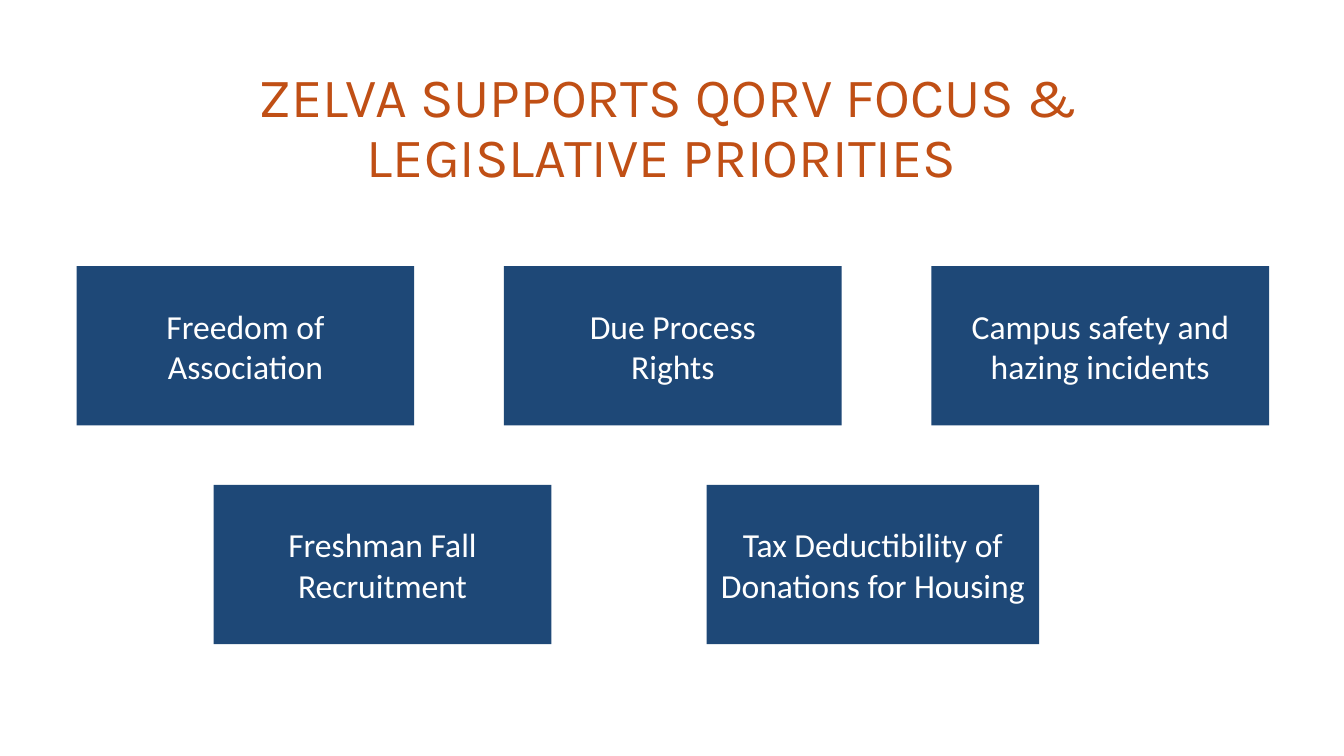
from dataclasses import dataclass

from pptx import Presentation
from pptx import util as u
from pptx.dml import color
from pptx.enum import shapes, text


@dataclass(frozen=True)
class Theme:
    heading: color.RGBColor = color.RGBColor(0xC0, 0x4F, 0x15)
    box: color.RGBColor = color.RGBColor(0x1E, 0x48, 0x77)
    box_text: color.RGBColor = color.RGBColor(0xFF, 0xFF, 0xFF)
    heading_font: str = "Karla"
    body_font: str = "Calibri"
    heading_size: float = 39.6
    body_size: float = 24


THEME = Theme()
BOX_HEIGHT = 113.76
TOP_ROW = ["Freedom of Association", "Due Process\vRights",
           "Campus safety and hazing incidents"]
BOTTOM_ROW = [("Freshman Fall\vRecruitment", 0, 241.2),
              ("Tax Deductibility of Donations for Housing", 352.08, 237.6)]


def format_text(paragraph, font_name, size, rgb):
    paragraph.alignment = text.PP_ALIGN.CENTER
    for run in paragraph.runs:
        run.font.name = font_name
        run.font.size = u.Pt(size)
        run.font.color.rgb = rgb


def add_title(slide, left, top, width, height):
    title = slide.shapes.title
    title.left, title.top = u.Pt(left), u.Pt(top)
    title.width, title.height = u.Pt(width), u.Pt(height)
    frame = title.text_frame
    frame.text = "ZELVA SUPPORTS QORV FOCUS & LEGISLATIVE PRIORITIES "
    frame.word_wrap = True
    frame.auto_size = text.MSO_AUTO_SIZE.NONE
    frame.vertical_anchor = text.MSO_ANCHOR.TOP
    frame.margin_top = u.Pt(21)
    paragraph = frame.paragraphs[0]
    paragraph.line_spacing = 0.9
    format_text(paragraph, THEME.heading_font, THEME.heading_size, THEME.heading)


def add_priority(slide, label, left, top, width):
    shape = slide.shapes.add_shape(shapes.MSO_SHAPE.RECTANGLE, u.Pt(left), u.Pt(top),
                                   u.Pt(width), u.Pt(BOX_HEIGHT))
    shape.shadow.inherit = False
    shape.fill.solid()
    shape.fill.fore_color.rgb = THEME.box
    shape.line.fill.background()
    frame = shape.text_frame
    frame.text = label
    frame.word_wrap = True
    frame.vertical_anchor = text.MSO_ANCHOR.MIDDLE
    format_text(frame.paragraphs[0], THEME.body_font, THEME.body_size, THEME.box_text)


def add_top_row(slide, left, top, width):
    box_width = 241.2
    step = (width - box_width) / (len(TOP_ROW) - 1)
    for index, label in enumerate(TOP_ROW):
        add_priority(slide, label, left + index * step, top, box_width)


def add_bottom_row(slide, left, top):
    for label, offset, box_width in BOTTOM_ROW:
        add_priority(slide, label, left + offset, top, box_width)


def main():
    presentation = Presentation()
    presentation.slide_width, presentation.slide_height = u.Pt(960), u.Pt(540)
    slide = presentation.slides.add_slide(presentation.slide_layouts[5])
    add_title(slide, 81.36, 28.8, 792, 84.96)
    add_top_row(slide, 54.72, 190.08, 851.76)
    add_bottom_row(slide, 152.64, 346.32)
    presentation.save("out.pptx")


if __name__ == "__main__":
    main()
